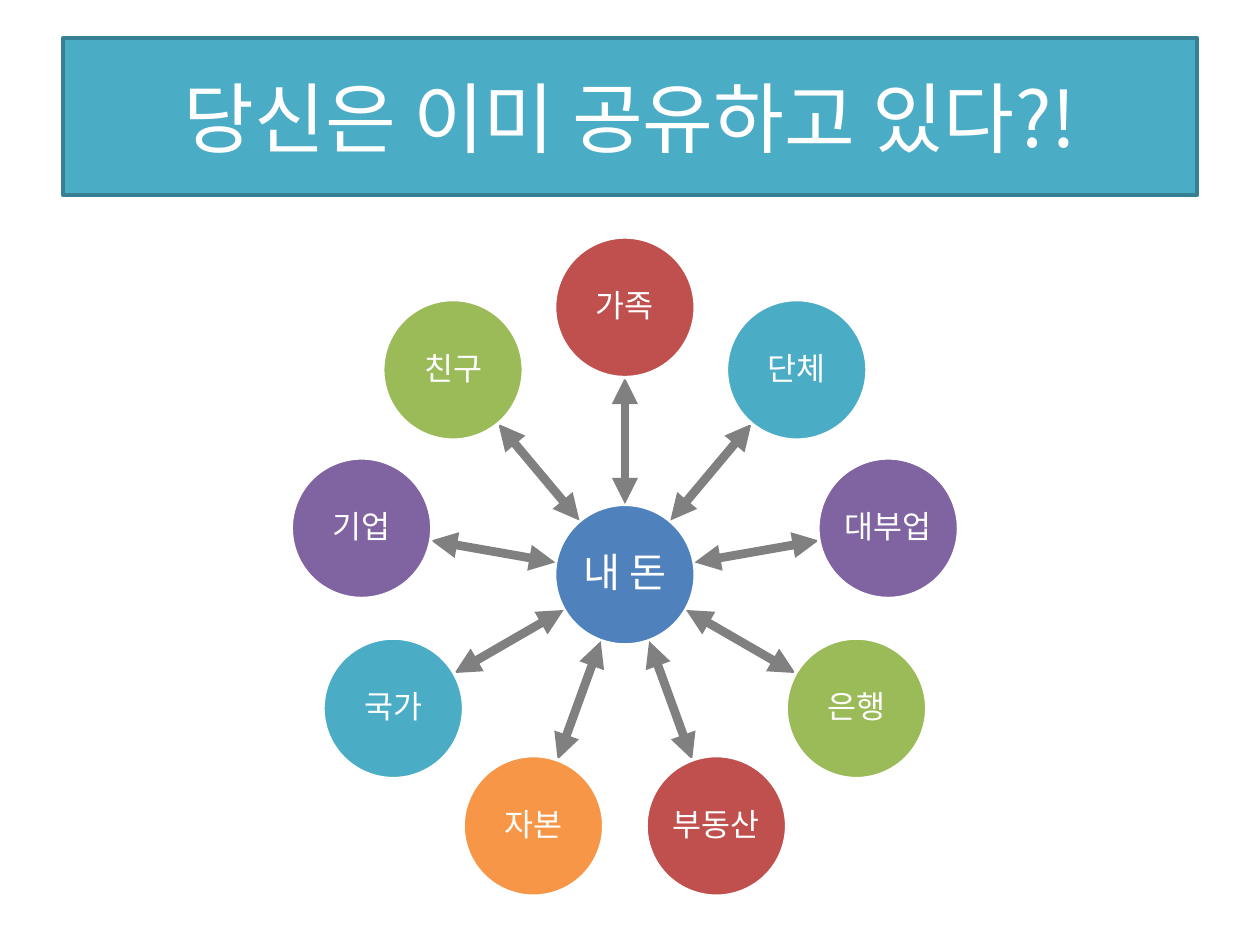
"""Build a slide showing the parties that already share my money."""
from math import cos, radians, sin

from lxml.etree import SubElement
from pptx import Presentation
from pptx.dml.color import RGBColor
from pptx.enum.shapes import MSO_CONNECTOR as Connector, MSO_SHAPE as Shape
from pptx.enum.text import MSO_ANCHOR as Anchor, PP_ALIGN as Align
from pptx.oxml.ns import qn
from pptx.util import Pt

WHITE = RGBColor(0xFF, 0xFF, 0xFF)
GRAY = RGBColor(0x80, 0x80, 0x80)
BLUE = RGBColor(0x4F, 0x81, 0xBD)
RED = RGBColor(0xC0, 0x50, 0x4D)
GREEN = RGBColor(0x9B, 0xBB, 0x59)
PURPLE = RGBColor(0x80, 0x64, 0xA2)
TEAL = RGBColor(0x4B, 0xAC, 0xC6)
DARK_TEAL = RGBColor(0x37, 0x7F, 0x92)
ORANGE = RGBColor(0xF7, 0x96, 0x46)

FONT = "Noto Sans CJK KR"
TITLE = "당신은 이미 공유하고 있다?!"
HUB = "내 돈"
PARTIES = [
    ("가족", RED),
    ("친구", GREEN),
    ("기업", PURPLE),
    ("국가", TEAL),
    ("자본", ORANGE),
    ("부동산", RED),
    ("은행", GREEN),
    ("대부업", PURPLE),
    ("단체", TEAL),
]

CENTER_X, CENTER_Y = 357.1, 328.4
DIAMETER = 80.4
ORBIT = 152.8
ARROW_START, ARROW_END = 40.4, 112.4


def add_label(slide, kind, box, text, size, fill, outline, spacing, inset):
    shape = slide.shapes.add_shape(kind, *(Pt(length) for length in box))
    shape.shadow.inherit = False
    shape.fill.solid()
    shape.fill.fore_color.rgb = fill
    shape.line.color.rgb = outline
    shape.line.width = Pt(2)
    frame = shape.text_frame
    frame.word_wrap = True
    frame.vertical_anchor = Anchor.MIDDLE
    frame.margin_left = frame.margin_right = Pt(inset)
    frame.margin_top = frame.margin_bottom = Pt(inset)
    paragraph = frame.paragraphs[0]
    paragraph.text = text
    paragraph.alignment = Align.CENTER
    paragraph.line_spacing = spacing
    font = paragraph.font
    font.size = Pt(size)
    font.name = FONT
    font.color.rgb = WHITE
    defaults = paragraph._p.pPr.find(qn("a:defRPr"))
    SubElement(defaults, qn("a:ea")).set("typeface", FONT)


def polar(radius, angle):
    return CENTER_X + radius * cos(angle), CENTER_Y - radius * sin(angle)


def add_circle(slide, center, text, size, fill):
    x, y = center
    box = (x - DIAMETER / 2, y - DIAMETER / 2, DIAMETER, DIAMETER)
    add_label(slide, Shape.OVAL, box, text, size, fill, WHITE, 0.9, 1)


def add_arrow(slide, angle):
    ends = polar(ARROW_START, angle) + polar(ARROW_END, angle)
    arrow = slide.shapes.add_connector(
        Connector.STRAIGHT, *(Pt(length) for length in ends))
    arrow.line.color.rgb = GRAY
    arrow.line.width = Pt(5)
    line = arrow.line._get_or_add_ln()
    for end in ("a:headEnd", "a:tailEnd"):
        SubElement(line, qn(end)).set("type", "triangle")
    SubElement(arrow._element.spPr, qn("a:effectLst"))


def main():
    deck = Presentation()
    deck.slide_width, deck.slide_height = Pt(720), Pt(540)
    slide = deck.slides.add_slide(deck.slide_layouts[6])
    add_label(slide, Shape.RECTANGLE, (36, 21.6, 648, 90), TITLE, 44,
              TEAL, DARK_TEAL, 1.0, 4)
    add_circle(slide, (CENTER_X, CENTER_Y), HUB, 23, BLUE)
    for index, (party, color) in enumerate(PARTIES):
        angle = radians(90 + index * 360 / len(PARTIES))
        add_arrow(slide, angle)
        add_circle(slide, polar(ORBIT, angle), party, 18, color)
    deck.save("out.pptx")


if __name__ == "__main__":
    main()
